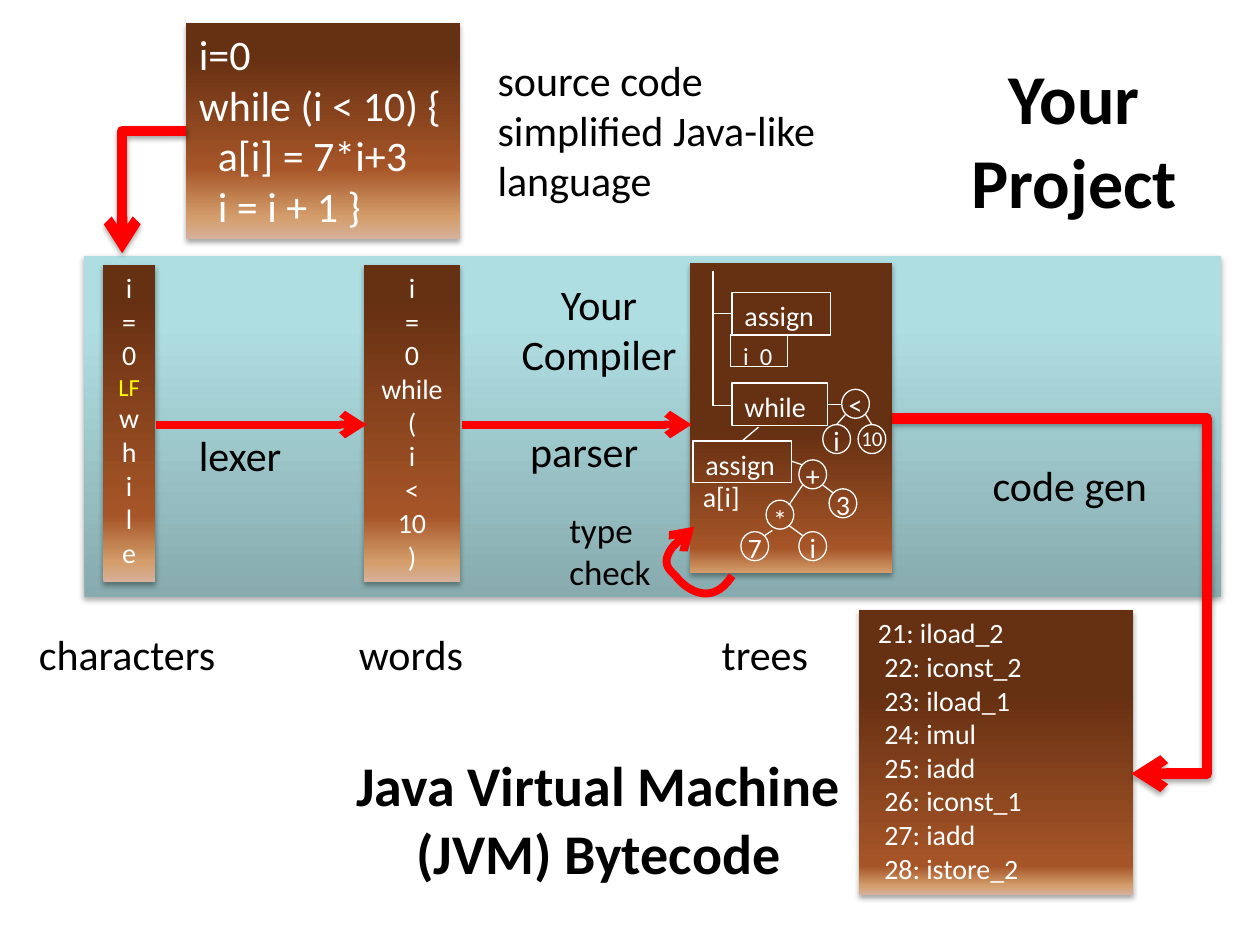
from lxml import etree
from pptx import Presentation, util as u
from pptx.dml.color import RGBColor
from pptx.enum import shapes, text
from pptx.oxml import ns

BROWNS = ("D6B19C", "D49E6C", "A65528", "663012")
TEALS = ("87ABAE", "AFDEE2", "AFE0E4")
CENTER = text.PP_ALIGN.CENTER


def color(value):
    """Return the RGB colour for a hex string."""
    return RGBColor.from_string(value)


def child(parent, tag, **attributes):
    """Add a drawing element with attributes to its parent."""
    node = etree.SubElement(parent, ns.qn("a:" + tag))
    for name, value in attributes.items():
        node.set(name, str(value))
    return node


def write(frame, words, size=24, ink="000000", bold=False, align=None,
          wrap=True, anchor=text.MSO_ANCHOR.TOP):
    """Fill a text frame, one paragraph for each line."""
    frame.text = words
    frame.word_wrap = wrap
    frame.vertical_anchor = anchor
    frame.auto_size = text.MSO_AUTO_SIZE.NONE
    for para in frame.paragraphs:
        para.alignment = align
        for span in para.runs:
            span.font.name = "Calibri"
            span.font.size = u.Pt(size)
            span.font.bold = bold
            span.font.color.rgb = color(ink)


def bezier(start, first, second, end, steps=16):
    """Return points along a cubic curve, without its start."""
    points = []
    for step in range(1, steps + 1):
        t = step / steps
        weights = ((1 - t) ** 3, 3 * t * (1 - t) ** 2, 3 * t * t * (1 - t), t ** 3)
        points.append(tuple(sum(w * p[axis] for w, p in zip(weights, (start, first, second, end)))
                            for axis in (0, 1)))
    return points


class Diagram:
    """Holds the style and the current page of the compiler diagram."""

    red, white, thin = "FF0000", "FFFFFF", 0.75

    def __init__(self, page):
        """Keep the page to draw on."""
        self.page = page

    def title(self, words, *place, **style):
        """Place and format the title."""
        box = self.page.shapes.title
        box.left, box.top, box.width, box.height = map(u.Inches, place)
        write(box.text_frame, words, **style)

    def label(self, words, *place, **style):
        """Add a text box."""
        box = self.page.shapes.add_textbox(*map(u.Inches, place))
        write(box.text_frame, words, **style)

    def shadow(self, item):
        """Give a shape or connector a soft shadow below it."""
        effects = item._element.spPr.find(ns.qn("a:effectLst"))
        outer = child(effects, "outerShdw", blurRad=40000, dist=23000, dir=5400000, rotWithShape=0)
        child(child(outer, "srgbClr", val="000000"), "alpha", val=35000)

    def panel(self, words, place, stops, shades=BROWNS, **style):
        """Add a rectangle with an upward gradient and a shadow."""
        box = self.page.shapes.add_shape(shapes.MSO_SHAPE.RECTANGLE, *map(u.Inches, place))
        box.fill.gradient()
        gradient = box._element.spPr.find(ns.qn("a:gradFill"))
        for part in list(gradient):
            gradient.remove(part)
        ramp = child(gradient, "gsLst")
        for stop, shade in zip(stops, shades):
            child(child(ramp, "gs", pos=stop * 1000), "srgbClr", val=shade)
        child(gradient, "lin", ang=16200000, scaled=0)
        box.line.fill.background()
        box.shadow.inherit = False
        self.shadow(box)
        if words:
            write(box.text_frame, words, **style)
        return box

    def outline(self, kind, *place):
        """Add an unfilled shape with a thin white edge."""
        box = self.page.shapes.add_shape(kind, *map(u.Inches, place))
        box.fill.background()
        box.shadow.inherit = False
        self.stroke(box, self.white, self.thin)
        return box

    def statement(self, words, *place, size=16):
        """Add a framed statement of the syntax tree."""
        box = self.outline(shapes.MSO_SHAPE.RECTANGLE, *place)
        write(box.text_frame, words, size=size, ink=self.white, align=text.PP_ALIGN.LEFT)

    def node(self, words, left, top, size=16, lift=0.06):
        """Add a round tree node with its centred label."""
        self.outline(shapes.MSO_SHAPE.OVAL, left, top, 0.22, 0.23)
        self.label(words, left - 0.05, top - lift, 0.32, 0.37, size=size, ink=self.white,
                   align=CENTER, wrap=False)

    def stroke(self, item, ink, width, arrow=False):
        """Set the line of a shape or connector."""
        item.line.color.rgb = color(ink)
        item.line.width = u.Pt(width)
        if arrow:
            child(item.line._get_or_add_ln(), "tailEnd", type="arrow")

    def line(self, *ends, ink="FFFFFF", width=0.75, arrow=False,
             kind=shapes.MSO_CONNECTOR.STRAIGHT):
        """Add a connector between two points."""
        link = self.page.shapes.add_connector(kind, *map(u.Inches, ends))
        self.stroke(link, ink, width, arrow)
        child(link._element.spPr, "effectLst")
        return link

    def elbow(self, *ends, turn=0, arrow=True):
        """Add a thick red connector with one corner."""
        link = self.line(*ends, ink=self.red, width=6, arrow=arrow, kind=shapes.MSO_CONNECTOR.ELBOW)
        link._element.spPr.find(ns.qn("a:prstGeom")).set("prst", "bentConnector2")
        link._element.spPr.find(ns.qn("a:xfrm")).set("rot", str(turn * 60000))
        self.shadow(link)

    def curve(self, start, *segments):
        """Add a red curved arrow through cubic segments."""
        points = [start]
        for segment in segments:
            points += bezier(points[-1], *segment)
        points = [tuple(map(u.Inches, point)) for point in points]
        builder = self.page.shapes.build_freeform(*points[0])
        builder.add_line_segments(points[1:], close=False)
        loop = builder.convert_to_shape()
        loop.fill.background()
        loop.shadow.inherit = False
        self.stroke(loop, self.red, 4.5, arrow=True)


def main():
    """Build the slide and save the deck."""
    deck = Presentation()
    deck.slide_width, deck.slide_height = u.Inches(10), u.Inches(7.5)
    art = Diagram(deck.slides.add_slide(deck.slide_layouts[5]))
    art.title("Your Project", 7.48, 0.38, 2.09, 1.45, size=40, bold=True, align=CENTER)

    compiler = art.panel("Your\nCompiler", (0.67, 2.03, 9.02, 2.71), (0, 80, 100), TEALS, align=CENTER)
    compiler.text_frame.margin_top = u.Inches(0.18)
    compiler.text_frame.margin_right = u.Inches(0.95)

    code = dict(ink=art.white, align=text.PP_ALIGN.LEFT)
    art.panel("i=0\nwhile (i < 10) {\n  a[i] = 7*i+3\n  i = i + 1 }",
              (1.48, 0.18, 2.17, 1.72), (0, 10, 33, 85), **code)
    art.panel(" 21: iload_2\n  22: iconst_2\n  23: iload_1\n  24: imul\n  25: iadd\n"
              "  26: iconst_1\n  27: iadd\n  28: istore_2",
              (6.82, 4.84, 2.17, 2.26), (0, 3, 10, 71), size=16, **code)
    column = dict(stops=(0, 6, 21, 89), size=16, ink=art.white, align=CENTER)
    letters = art.panel("i\n=\n0\nLF\nw\nh\ni\nl\ne", (0.82, 2.1, 0.41, 2.52), **column)
    feed = letters.text_frame.paragraphs[3].runs[0].font
    feed.size, feed.color.rgb = u.Pt(14), color("FFFF00")
    art.panel("i\n=\n0\nwhile\n(\ni\n<\n10\n)", (2.89, 2.1, 0.76, 2.52), **column)
    art.panel("", (5.48, 2.09, 1.6, 2.46), (0, 0, 8, 46))

    art.label("Java Virtual Machine (JVM) Bytecode", 2.61, 5.91, 4.28, 1.18,
              size=32, bold=True, align=CENTER)
    art.label("source code\nsimplified Java-like\nlanguage", 3.85, 0.38, 2.75, 1.31, wrap=False)
    for words, left, top, width in (
            ("lexer", 1.48, 3.36, 0.86), ("parser", 4.11, 3.33, 1.07), ("code gen", 7.78, 3.6, 1.44),
            ("characters", 0.21, 4.94, 1.62), ("words", 2.75, 4.94, 1.04), ("trees", 5.63, 4.94, 0.9)):
        art.label(words, left, top, width, 0.5, wrap=False)
    art.label("type\ncheck", 4.42, 3.99, 0.86, 0.77, size=20, wrap=False)

    art.statement("assign", 5.81, 2.32, 0.78, 0.34)
    art.statement("i  0", 5.8, 2.66, 0.45, 0.25, size=14)
    art.statement("while", 5.81, 3.04, 0.76, 0.34)
    art.statement("assign", 5.5, 3.5, 0.78, 0.33)
    art.label("a[i]", 5.48, 3.76, 0.5, 0.37, size=16, ink=art.white, wrap=False)
    for words, left, top in (("<", 6.68, 3.09), ("i", 6.53, 3.37), ("+", 6.34, 3.65),
                             ("3", 6.58, 3.88), ("7", 5.88, 4.22), ("i", 6.34, 4.22)):
        art.node(words, left, top)
    art.node("*", 6.08, 3.97, lift=0.03)
    art.node("10", 6.81, 3.37, size=12, lift=0.04)
    for branch in ((5.66, 2.15, 5.66, 3.22), (5.81, 2.49, 5.66, 2.49), (5.8, 3.22, 5.66, 3.22),
                   (6.37, 3.85, 6.26, 4.01), (6.13, 4.21, 6.07, 4.25), (6.53, 3.85, 6.61, 3.91),
                   (6.26, 4.17, 6.37, 4.25), (5.89, 3.5, 6.02, 3.39), (6.28, 3.66, 6.37, 3.69),
                   (6.71, 3.29, 6.64, 3.37), (6.87, 3.29, 6.92, 3.37), (6.68, 3.21, 6.56, 3.21)):
        art.line(*branch)

    for start, end in ((1.24, 2.91), (3.67, 5.49)):
        art.line(start, 3.37, end, 3.37, ink=art.red, width=4.5, arrow=True)
    art.elbow(1.48, 1.04, 0.97, 2.01)
    art.elbow(7.08, 3.32, 9.58, 4.76, arrow=False)
    art.elbow(8.59, 5.15, 9.97, 5.75, turn=90)
    art.curve((5.81, 4.57), ((5.64, 4.84), (5.42, 4.65), (5.37, 4.58)),
              ((5.32, 4.52), (5.16, 4.45), (5.51, 4.18)))
    deck.save("out.pptx")


if __name__ == "__main__":
    main()
